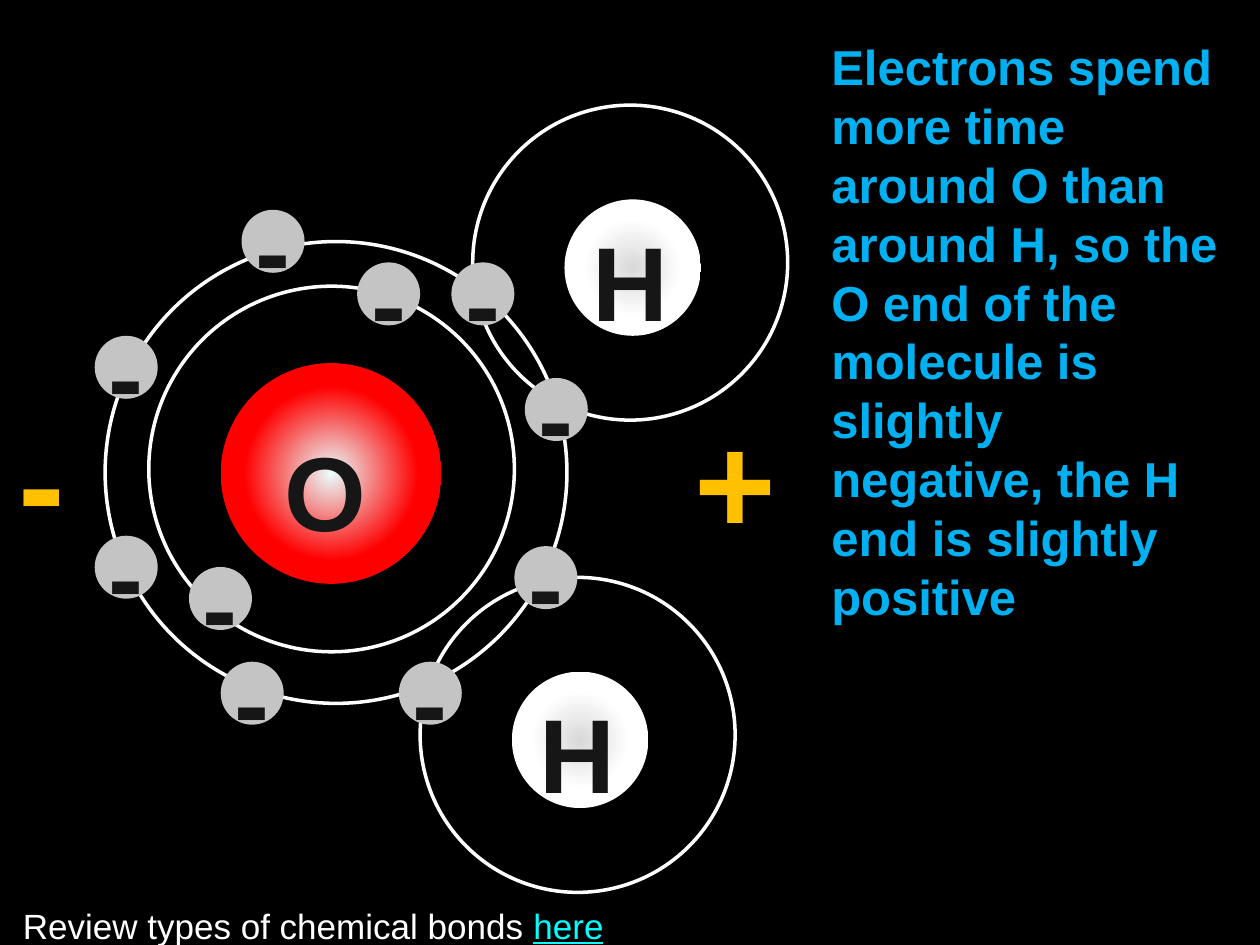
from dataclasses import dataclass

from pptx import Presentation
from pptx.dml.color import RGBColor
from pptx.enum.shapes import MSO_SHAPE
from pptx.enum.text import MSO_ANCHOR, PP_ALIGN
from pptx.oxml import parse_xml
from pptx.util import Cm, Pt

OVAL = MSO_SHAPE.OVAL
TOP, MIDDLE = MSO_ANCHOR.TOP, MSO_ANCHOR.MIDDLE
LEFT, CENTER = PP_ALIGN.LEFT, PP_ALIGN.CENTER
DRAWING_NS = "http://schemas.openxmlformats.org/drawingml/2006/main"


@dataclass(frozen=True)
class Theme:
    font: str = "Arial"
    background: str = "000000"
    white: str = "FFFFFF"
    ink: str = "161616"
    heading: str = "00B0F0"
    link: str = "00FFFF"
    charge: str = "FFC000"
    electron: str = "C4C4C4"
    oxygen: tuple = (("EAFFFF", 0), ("FF0000", 56))
    hydrogen: tuple = (("D9D9D9", 0), ("FFFFFF", 51))
    heading_size: int = 28
    note_size: int = 20
    symbol_size: int = 60
    charge_size: int = 80
    line: int = 2


T = Theme()
SYMBOL_W, SYMBOL_H, CHARGE_H = 4.66, 2.82, 3.68
ELECTRON_D = 1.27

ELECTRONS = [
    (8.04, 13.34), (10.37, 11.01), (10.58, 7.62), (9.1, 5.29), (1.91, 6.77),
    (4.87, 4.23), (1.91, 10.8), (4.45, 13.34), (7.2, 5.29), (3.81, 11.43),
]


def rgb(value):
    return RGBColor.from_string(value)


def add_run(p, text, size, color, bold=False, underline=None):
    r = p.add_run()
    r.text = text
    r.font.name = T.font
    r.font.size = Pt(size)
    r.font.bold = bold
    r.font.underline = underline
    r.font.color.rgb = rgb(color)


def add_text(s, box, text, align=CENTER, anchor=TOP, **fmt):
    tf = s.shapes.add_textbox(*map(Cm, box)).text_frame
    tf.word_wrap = True
    tf.vertical_anchor = anchor
    p = tf.paragraphs[0]
    p.alignment = align
    add_run(p, text, **fmt)
    return p


def add_circle(s, x, y, d, fill=None, line=None):
    sp = s.shapes.add_shape(OVAL, Cm(x), Cm(y), Cm(d), Cm(d))
    sp.shadow.inherit = False
    if fill:
        sp.fill.solid()
        sp.fill.fore_color.rgb = rgb(fill)
    else:
        sp.fill.background()
    if line:
        sp.line.color.rgb = rgb(line)
        sp.line.width = Pt(T.line)
    else:
        sp.line.fill.background()
    return sp


def radial_fill(sp, stops):
    gs = "".join(
        f'<a:gs pos="{pos * 1000}"><a:srgbClr val="{color}"/></a:gs>'
        for color, pos in (*stops, (stops[-1][0], 100))
    )
    grad = parse_xml(
        f'<a:gradFill xmlns:a="{DRAWING_NS}" rotWithShape="1"><a:gsLst>{gs}</a:gsLst>'
        '<a:path path="circle"><a:fillToRect l="50000" t="50000" r="50000" b="50000"/>'
        "</a:path></a:gradFill>"
    )
    sp_pr = sp.fill._xPr
    sp_pr.replace(sp_pr.find(f"{{{DRAWING_NS}}}noFill"), grad)


def add_atom(s, x, y, symbol, shells, nucleus, label, stops):
    for dx, dy, d in shells:
        add_circle(s, x + dx, y + dy, d, line=T.white)
    dx, dy, d = nucleus
    radial_fill(add_circle(s, x + dx, y + dy, d), stops)
    dx, dy = label
    add_text(s, (x + dx, y + dy, SYMBOL_W, SYMBOL_H), symbol,
             size=T.symbol_size, color=T.ink, bold=True)


def add_electron(s, x, y):
    add_circle(s, x, y, ELECTRON_D, fill=T.electron)
    left = x + (ELECTRON_D - SYMBOL_W) / 2
    add_text(s, (left, y - ELECTRON_D / 2, SYMBOL_W, SYMBOL_H), "-",
             size=T.symbol_size, color=T.ink, bold=True)


def add_molecule(s, x, y):
    add_atom(s, x, y, "O", [(0, 0, 9.31), (0.88, 0.9, 7.37)],
             (2.33, 2.45, 4.45), (2.11, 3.6), T.oxygen)
    for dx, dy in ((7.41, -2.75), (6.35, 6.77)):
        add_atom(s, x + dx, y + dy, "H", [(0, 0, 6.35)],
                 (1.85, 1.9, 2.75), (0.84, 2.12), T.hydrogen)
    for ex, ey in ELECTRONS:
        add_electron(s, ex, ey)


def add_charges(s, y):
    for x, sign in ((-1.48, "-"), (12.49, "+")):
        add_text(s, (x, y, SYMBOL_W, CHARGE_H), sign,
                 size=T.charge_size, color=T.charge, bold=True)


def add_heading(s, box):
    add_text(s, box,
             "Electrons spend more time around O than around H, so the O end of "
             "the molecule is slightly negative, the H end is slightly positive",
             align=LEFT, anchor=MIDDLE,
             size=T.heading_size, color=T.heading, bold=True)


def add_note(s, box):
    p = add_text(s, box, "Review types of chemical bonds ", align=LEFT,
                 size=T.note_size, color=T.white)
    add_run(p, "here", T.note_size, T.link, underline=True)


def main():
    prs = Presentation()
    prs.slide_width, prs.slide_height = Cm(25.4), Cm(19.05)
    s = prs.slides.add_slide(prs.slide_layouts[6])
    s.background.fill.solid()
    s.background.fill.fore_color.rgb = rgb(T.background)
    add_heading(s, (16.51, 5.08, 8.47, 3.18))
    add_note(s, (0.21, 18.1, 13.97, 1.11))
    add_molecule(s, 2.12, 4.87)
    add_charges(s, 7.83)
    prs.save("out.pptx")


if __name__ == "__main__":
    main()
